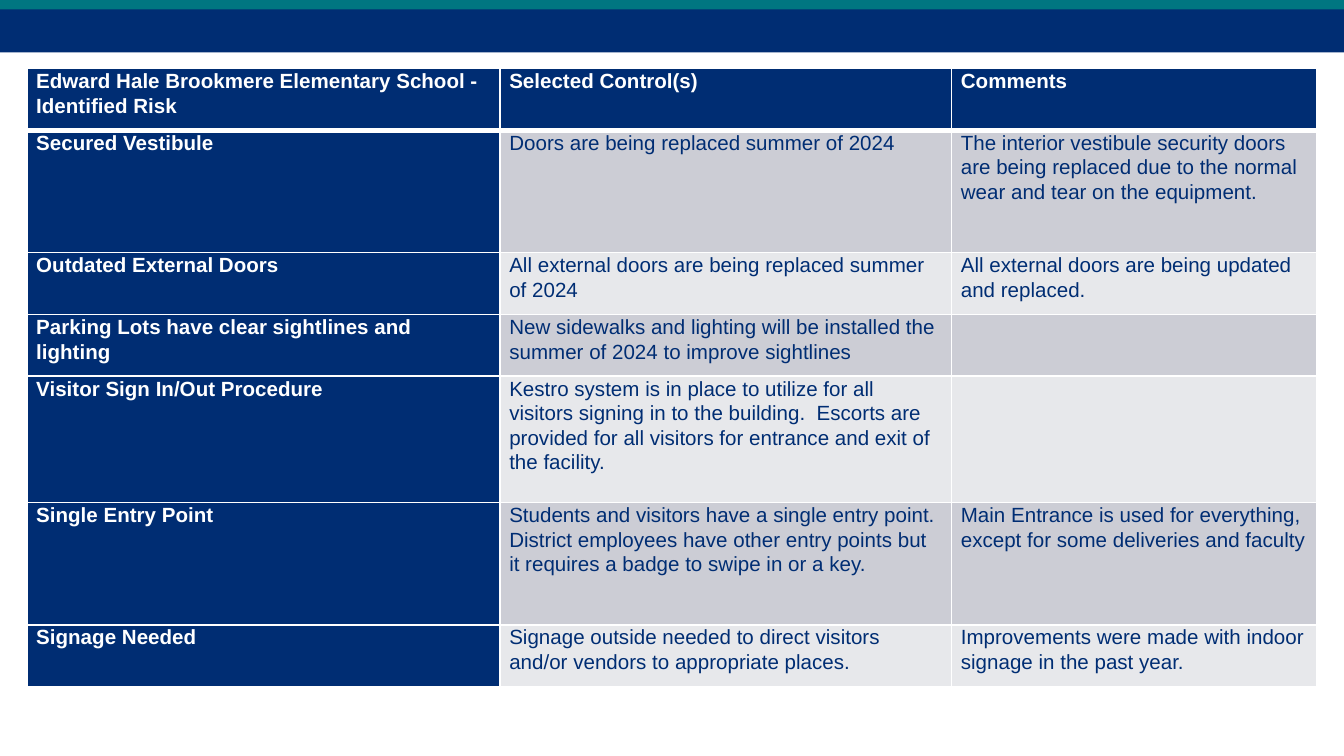
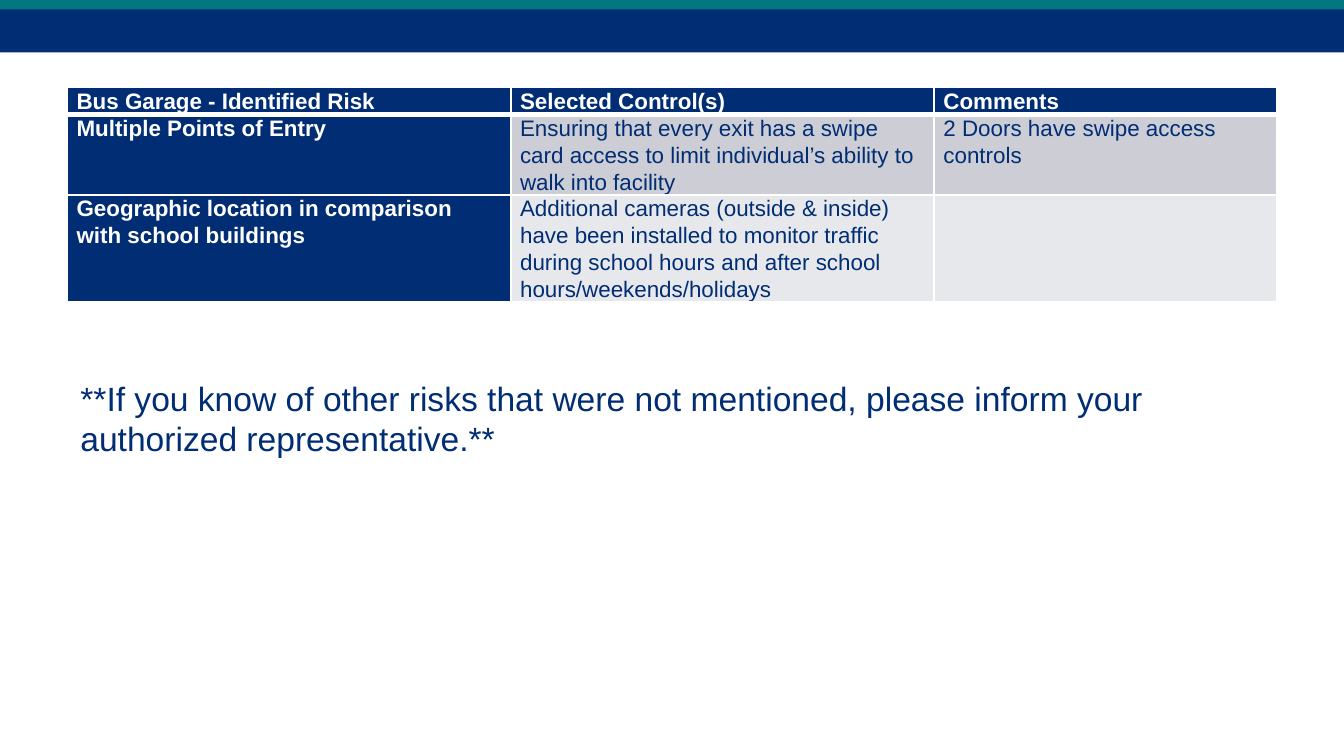
from lxml import etree
from pptx import Presentation
from pptx import util as u
from pptx.dml.color import RGBColor
from pptx.enum import shapes, text as t
from pptx.oxml.ns import qn

W = 10
H = W * 9 / 16
FONT = "Arial"
COLORS = {
    "navy": "002D73",
    "teal": "007681",
    "white": "FFFFFF",
    "odd_row": "CCCDD5",
    "even_row": "E7E8EB",
}

SCHOOL_RISKS = [
    ("Edward Hale Brookmere Elementary School - Identified Risk",
     "Selected Control(s)", "Comments"),
    ("Secured Vestibule", "Doors are being replaced summer of 2024",
     "The interior vestibule security doors are being replaced due to the "
     "normal wear and tear on the equipment."),
    ("Outdated External Doors",
     "All external doors are being replaced summer of 2024",
     "All external doors are being updated and replaced."),
    ("Parking Lots have clear sightlines and lighting",
     "New sidewalks and lighting will be installed the summer of 2024 to "
     "improve sightlines", ""),
    ("Visitor Sign In/Out Procedure",
     "Kestro system is in place to utilize for all visitors signing in to the "
     "building.  Escorts are provided for all visitors for entrance and exit "
     "of the facility.", ""),
    ("Single Entry Point",
     "Students and visitors have a single entry point.  District employees "
     "have other entry points but it requires a badge to swipe in or a key.",
     "Main Entrance is used for everything, except for some deliveries and "
     "faculty"),
    ("Signage Needed",
     "Signage outside needed to direct visitors and/or vendors to appropriate "
     "places.",
     "Improvements were made with indoor signage in the past year."),
]

GARAGE_RISKS = [
    ("Bus Garage - Identified Risk", "Selected Control(s)", "Comments"),
    ("Multiple Points of Entry",
     "Ensuring that every exit has a swipe card access to limit individual’s "
     "ability to walk into facility",
     "2 Doors have swipe access controls"),
    ("Geographic location in comparison with school buildings",
     "Additional cameras (outside & inside) have been installed to monitor "
     "traffic during school hours and after school hours/weekends/holidays",
     ""),
]

REPORT_NOTE = ("**If you know of other risks that were not mentioned, please "
               "inform your authorized representative.**")


def rgb(name):
    return RGBColor.from_string(COLORS[name])


def set_font(p, size, color, bold=False):
    p.font.name = FONT
    p.font.size = u.Pt(size)
    p.font.bold = bold
    p.font.color.rgb = rgb(color)


def add_band(slide, top, height, color):
    sp = slide.shapes.add_shape(shapes.MSO_SHAPE.RECTANGLE, 0, u.Inches(top),
                                u.Inches(W), u.Inches(height))
    sp.shadow.inherit = False
    sp.fill.solid()
    sp.fill.fore_color.rgb = rgb(color)
    sp.line.fill.background()


def add_slide(prs):
    """Blank slide with the two header bands."""
    s = prs.slides.add_slide(prs.slide_layouts[6])
    add_band(s, 0.06, 0.33, "navy")
    add_band(s, -0.02, 0.09, "teal")
    return s


def set_borders(cell, **widths):
    """White borders, 1 pt unless a side (L, R, T, B) is given."""
    tc_pr = cell._tc.get_or_add_tcPr()
    for i, side in enumerate("LRTB"):
        ln = etree.Element(qn(f"a:ln{side}"), w=str(u.Pt(widths.get(side, 1))))
        fill = etree.SubElement(ln, qn("a:solidFill"))
        etree.SubElement(fill, qn("a:srgbClr"), val=COLORS["white"])
        tc_pr.insert(i, ln)


def fill_cell(cell, text, row, col, size):
    heading = row == 0 or col == 0
    band = "odd_row" if row % 2 else "even_row"
    cell.fill.solid()
    cell.fill.fore_color.rgb = rgb("navy" if heading else band)
    set_borders(cell, B=3 if row == 0 else 1, T=3 if row == 1 else 1)
    cell.margin_left = cell.margin_right = u.Inches(0.07)
    cell.margin_top = cell.margin_bottom = 0
    p = cell.text_frame.paragraphs[0]
    p.text = text
    p.line_spacing = 1.07
    p.space_after = u.Pt(8)
    set_font(p, size, "white" if heading else "navy", heading)


def add_risk_table(slide, rows, left, top, widths, heights, size):
    tbl = slide.shapes.add_table(
        len(rows), len(widths), u.Inches(left), u.Inches(top),
        u.Inches(sum(widths)), u.Inches(sum(heights))).table
    for column, width in zip(tbl.columns, widths):
        column.width = u.Inches(width)
    for r, (texts, height) in enumerate(zip(rows, heights)):
        tbl.rows[r].height = u.Inches(height)
        for c, text in enumerate(texts):
            fill_cell(tbl.cell(r, c), text, r, c, size)
    return tbl


def add_note(slide, text, left, top, width, height):
    tf = slide.shapes.add_textbox(u.Inches(left), u.Inches(top),
                                  u.Inches(width), u.Inches(height)).text_frame
    tf.word_wrap = True
    tf.auto_size = t.MSO_AUTO_SIZE.SHAPE_TO_FIT_TEXT
    p = tf.paragraphs[0]
    p.text = text
    set_font(p, 18, "navy")


def main():
    prs = Presentation()
    prs.slide_width, prs.slide_height = u.Inches(W), u.Inches(H)

    # School risks
    s = add_slide(prs)
    short, tall = 0.46, 0.91
    add_risk_table(s, SCHOOL_RISKS, 0.02 * W, 0.51, (3.52, 3.36, 2.72),
                   (short, tall, short, short, 0.94, tall, short), 11)

    # Bus garage risks and closing note
    s = add_slide(prs)
    margin = 0.05 * W
    tbl = add_risk_table(s, GARAGE_RISKS, margin, 0.65, (3.3, 3.15, 2.55),
                         (0.2, 0.59, 0.79), 12)
    tbl.cell(0, 0).text_frame.paragraphs[0].alignment = t.PP_ALIGN.JUSTIFY
    add_note(s, REPORT_NOTE, margin, 2.76, W - 2 * margin, 0.71)

    prs.save("out.pptx")


if __name__ == "__main__":
    main()
